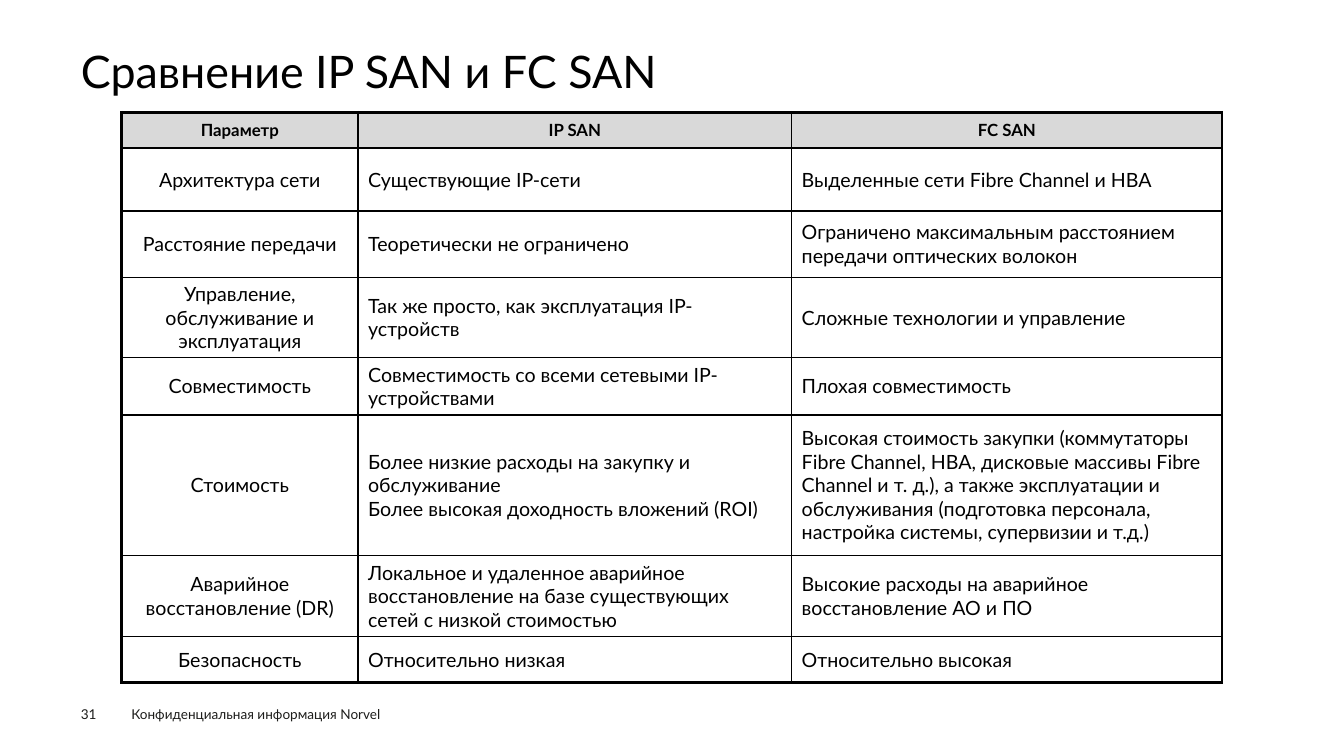
"""Builds the slide that compares IP SAN and FC SAN."""
from lxml.etree import SubElement
from pptx import Presentation
from pptx.dml.color import RGBColor
from pptx.enum.text import MSO_ANCHOR, PP_ALIGN
from pptx.oxml.ns import qn
from pptx.util import Pt

PX = 9525
FONT = "Lato"
BLACK = RGBColor(0x00, 0x00, 0x00)
INK = RGBColor(0x1D, 0x1D, 0x1B)
GREY = RGBColor(0xD9, 0xD9, 0xD9)
THICK, THIN = Pt(2.25), Pt(1)

TITLE = "Сравнение IP SAN и FC SAN"
PAGE = "31"
FOOTER = "Конфиденциальная информация Norvel"
ROWS = [
    ("Параметр", "IP SAN", "FC SAN"),
    ("Архитектура сети", "Существующие IP-сети",
     "Выделенные сети Fibre Channel и HBA"),
    ("Расстояние передачи", "Теоретически не ограничено",
     "Ограничено максимальным расстоянием передачи оптических волокон"),
    ("Управление, обслуживание и эксплуатация",
     "Так же просто, как эксплуатация IP-устройств",
     "Сложные технологии и управление"),
    ("Совместимость", "Совместимость со всеми сетевыми IP-устройствами",
     "Плохая совместимость"),
    ("Стоимость",
     "Более низкие расходы на закупку и обслуживание\n"
     "Более высокая доходность вложений (ROI)",
     "Высокая стоимость закупки (коммутаторы Fibre Channel, HBA, "
     "дисковые массивы Fibre Channel и т. д.), а также эксплуатации и "
     "обслуживания (подготовка персонала, настройка системы, супервизии и т.д.)"),
    ("Аварийное восстановление (DR)",
     "Локальное и удаленное аварийное восстановление на базе "
     "существующих сетей с низкой стоимостью",
     "Высокие расходы на аварийное восстановление АО и ПО"),
    ("Безопасность", "Относительно низкая", "Относительно высокая"),
]
TABLE_LEFT, TABLE_TOP = 116, 107
COL_WIDTHS = [225, 413, 410]
ROW_HEIGHTS = [34, 60, 63, 63, 46, 134, 63, 44]


def style(tf, size, color, bold=False, align=PP_ALIGN.LEFT):
    for p in tf.paragraphs:
        p.alignment = align
        for r in p.runs:
            r.font.name = FONT
            r.font.size = Pt(size)
            r.font.bold = bold
            r.font.color.rgb = color


def add_text(slide, text, box, size, color, inset=(0, 0)):
    sp = slide.shapes.add_textbox(*(n * PX for n in box))
    tf = sp.text_frame
    tf.word_wrap = True
    tf.margin_left = tf.margin_right = inset[0] * PX
    tf.margin_top = tf.margin_bottom = inset[1] * PX
    tf.text = text
    style(tf, size, color)
    return tf


def add_borders(cell, outer):
    tcPr = cell._tc.get_or_add_tcPr()
    for side in "LRTB":
        width = THICK if side in outer else THIN
        ln = SubElement(tcPr, qn(f"a:ln{side}"), w=str(int(width)))
        fill = SubElement(ln, qn("a:solidFill"))
        SubElement(fill, qn("a:srgbClr"), val=str(BLACK))


def add_comparison(slide):
    n_rows, n_cols = len(ROWS), len(COL_WIDTHS)
    frame = slide.shapes.add_table(
        n_rows, n_cols, TABLE_LEFT * PX, TABLE_TOP * PX,
        sum(COL_WIDTHS) * PX, sum(ROW_HEIGHTS) * PX)
    table = frame.table
    table.first_row = table.horz_banding = False
    for col, width in zip(table.columns, COL_WIDTHS):
        col.width = width * PX
    for i, (row, height) in enumerate(zip(table.rows, ROW_HEIGHTS)):
        row.height = height * PX
        header = i == 0
        for j, cell in enumerate(row.cells):
            edges = {"L": j == 0, "R": j == n_cols - 1,
                     "T": header, "B": i == n_rows - 1}
            add_borders(cell, [side for side, on in edges.items() if on])
            if header:
                cell.fill.solid()
                cell.fill.fore_color.rgb = GREY
            else:
                cell.fill.background()
            cell.vertical_anchor = MSO_ANCHOR.MIDDLE
            cell.text_frame.text = ROWS[i][j]
            centred = header or j == 0
            style(cell.text_frame, 12 if header else 14, BLACK, header,
                  PP_ALIGN.CENTER if centred else PP_ALIGN.LEFT)


def main():
    prs = Presentation()
    prs.slide_width, prs.slide_height = 1280 * PX, 720 * PX
    slide = prs.slides.add_slide(prs.slide_layouts[6])
    add_text(slide, FOOTER, (115, 667, 316, 25), 9.7, INK, (10, 5))
    add_text(slide, PAGE, (77, 672, 53, 15), 9.7, INK)
    title = add_text(slide, TITLE, (77, 47, 1126, 52), 32, BLACK)
    title.paragraphs[0].line_spacing = 0.9
    add_comparison(slide)
    prs.save("out.pptx")


if __name__ == "__main__":
    main()
